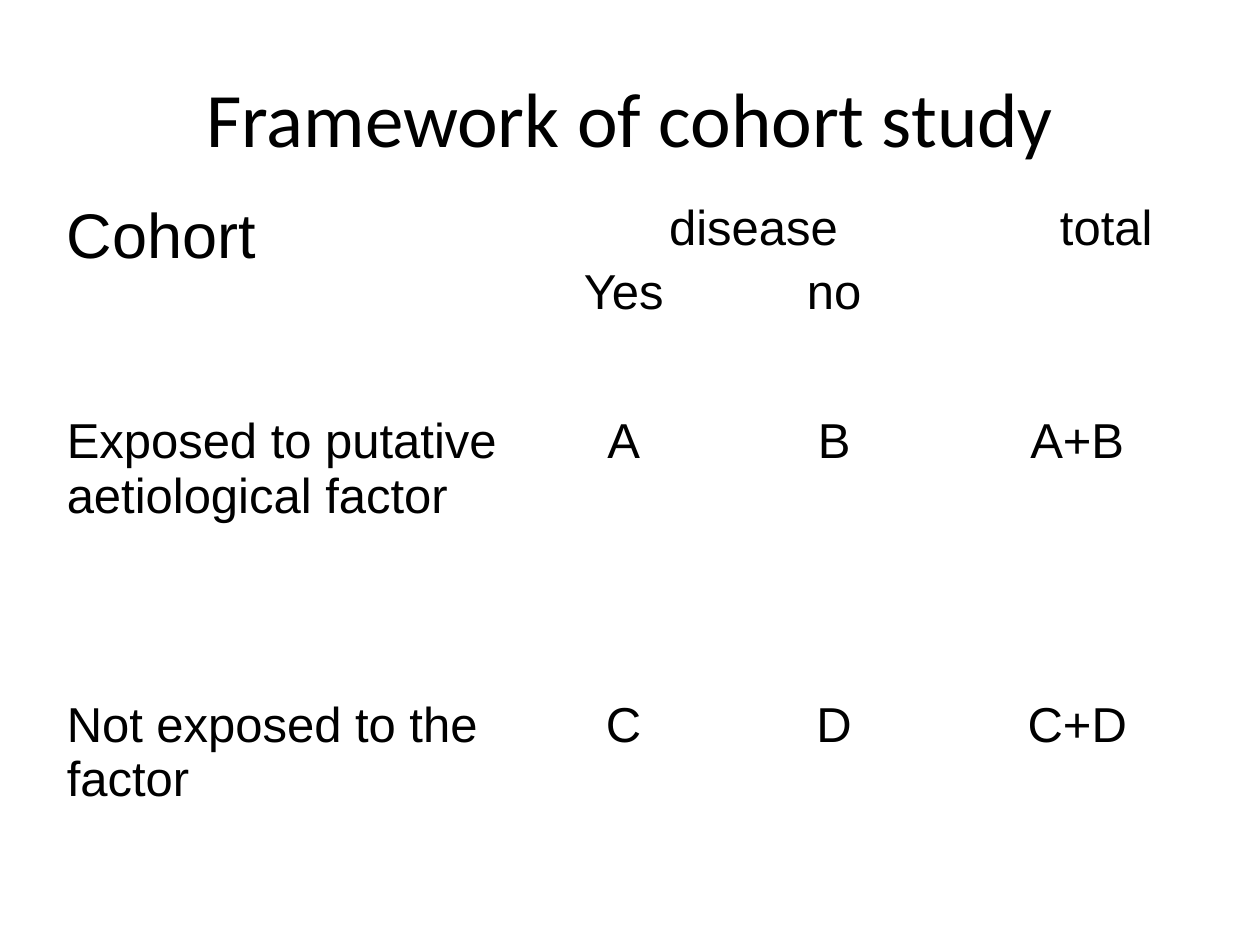
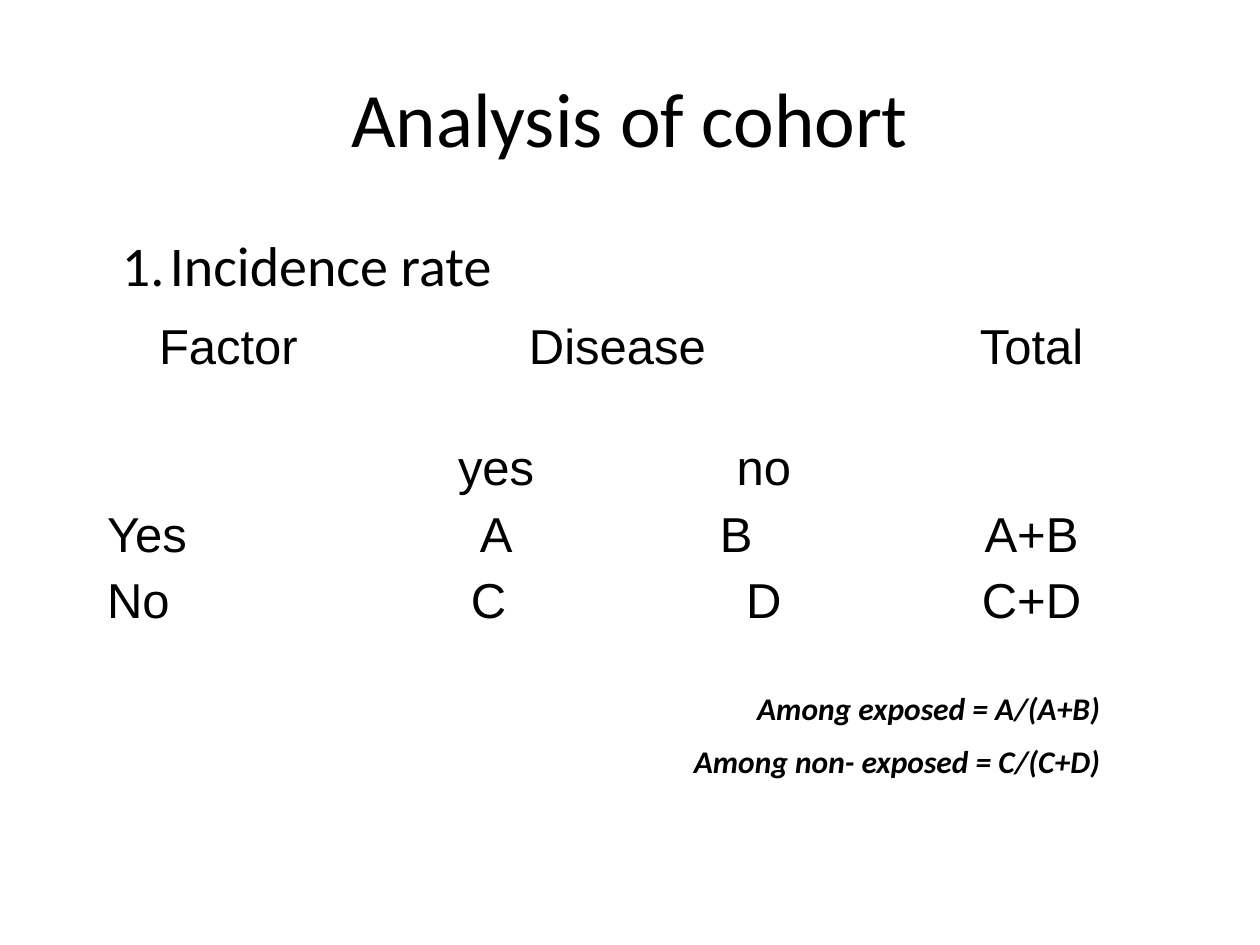
from pptx import Presentation
from pptx.util import Inches, Pt
from pptx.dml.color import RGBColor
from pptx.enum.text import PP_ALIGN as Align, MSO_ANCHOR as Anchor
from pptx.oxml import parse_xml
from pptx.oxml.ns import nsdecls

BLACK, WHITE = "000000", "FFFFFF"
HEAD, BODY = "Calibri", "Arial"


def tint(code):
    return RGBColor.from_string(code)


def node(tag, inner="", **attrs):
    pairs = " ".join(f'{key}="{val}"' for key, val in attrs.items())
    return parse_xml(f'<a:{tag} {nsdecls("a")} {pairs}>{inner}</a:{tag}>')


class Deck:
    def __init__(self):
        self.prs = Presentation()
        self.prs.slide_width, self.prs.slide_height = Inches(10), Inches(7.5)

    def page(self, title):
        self.slide = self.prs.slides.add_slide(self.prs.slide_layouts[5])
        fill = self.slide.background.fill
        fill.solid()
        fill.fore_color.rgb = tint(WHITE)
        box = self.slide.shapes.title
        self.place(box, 0.5, 0.3, 9, 1.25)
        box.text_frame.text = title
        box.text_frame.vertical_anchor = Anchor.MIDDLE
        self.style(box.text_frame, 44, HEAD, Align.CENTER)

    def place(self, box, *spot):
        box.left, box.top, box.width, box.height = map(Inches, spot)

    def style(self, frame, size, face, align, gap=0, bold=False):
        for i, para in enumerate(frame.paragraphs):
            para.alignment = align
            para.space_before = Pt(gap if i else 0)
            for run in para.runs:
                font = run.font
                font.size, font.name = Pt(size), face
                font.bold = font.italic = bold
                font.color.rgb = tint(BLACK)

    def text(self, words, spot, size, align=Align.LEFT, gap=0, bold=False):
        box = self.slide.shapes.add_textbox(*map(Inches, spot))
        frame = box.text_frame
        frame.word_wrap = True
        frame.text = words
        self.style(frame, size, HEAD, align, gap, bold)
        return frame

    def number(self, para, indent):
        props = para._p.get_or_add_pPr()
        props.set("marL", str(Inches(indent)))
        props.set("indent", str(-Inches(indent)))
        props.append(node("buAutoNum", type="arabicPeriod"))

    def tabs(self, para, stops):
        marks = "".join(f'<a:tab pos="{Inches(stop)}" algn="ctr"/>' for stop in stops)
        para._p.get_or_add_pPr().append(node("tabLst", marks))

    def edge(self, cell, top):
        props = cell._tc.get_or_add_tcPr()
        paint = f'<a:solidFill><a:srgbClr val="{WHITE}"/></a:solidFill>'
        for i, side in enumerate("LRTB"):
            width = 3 if (side == "B" and top) or (side == "T" and not top) else 1
            props.insert(i, node("ln" + side, paint, w=Pt(width)))

    def table(self, spot, cols, rows, data):
        shape = self.slide.shapes.add_table(len(rows), len(cols), *map(Inches, spot))
        grid = shape.table
        grid.first_row = grid.horz_banding = False
        for col, width in zip(grid.columns, cols):
            col.width = Inches(width)
        for row, height in zip(grid.rows, rows):
            row.height = Inches(height)
        for r, line in enumerate(data):
            for c, words in enumerate(line):
                cell = grid.cell(r, c)
                cell.margin_top, cell.margin_bottom = Inches(0.05), Inches(0.04)
                cell.fill.background()
                self.edge(cell, r == 0)
                cell.text_frame.text = words
                align = Align.LEFT if c == 0 or "\t" in words else Align.CENTER
                self.style(cell.text_frame, 28, BODY, align, 5)
        return grid

    def shift(self, cell, dist):
        """Move centred text sideways by widening one margin."""
        side = "margin_left" if dist > 0 else "margin_right"
        setattr(cell, side, Inches(0.1 + 2 * abs(dist)))


deck = Deck()

# Framework: outcomes share one column, set apart by tab stops
deck.page("Framework of cohort study")
grid = deck.table((0.43, 1.55, 9.21, 5.5), (3.82, 3.01, 2.38), (1.69, 2.25, 1.55), [
    ("Cohort", "\tdisease\n\tYes\tno", "total"),
    ("Exposed to putative aetiological factor", "\tA\tB", "A+B"),
    ("Not exposed to the factor", "\tC\tD", "C+D"),
])
grid.cell(0, 0).text_frame.paragraphs[0].runs[0].font.size = Pt(36)
for r in range(3):
    for para in grid.cell(r, 1).text_frame.paragraphs:
        deck.tabs(para, (1.63,) if "disease" in para.text else (0.6, 2.27))
    deck.shift(grid.cell(r, 2), 0.1 if r else 0.33)

# Analysis: incidence table
deck.page("Analysis of cohort")
grid = deck.table((0.75, 2.49, 8.5, 2.55), [2.125] * 4, [0.96] + [0.53] * 3, [
    ("Factor", "Disease", "", "Total"),
    ("", "yes", "no", ""),
    ("Yes", "A", "B", "A+B"),
    ("No", "C", "D", "C+D"),
])
grid.cell(0, 1).merge(grid.cell(0, 2))
grid.cell(0, 0).text_frame.paragraphs[0].alignment = Align.CENTER
for r, c, dist in ((0, 1, -0.1), (2, 2, -0.22), (3, 1, -0.06)):
    deck.shift(grid.cell(r, c), dist)

# Rates and list heading
deck.text("Among exposed = A/(A+B)\nAmong non- exposed = C/(C+D)",
          (1.75, 5.42, 7.08, 1.11), 18, Align.RIGHT, 8.5, True)
frame = deck.text("Incidence rate", (0.87, 1.78, 3.26, 0.64), 32)
deck.number(frame.paragraphs[0], 0.38)

deck.prs.save("out.pptx")
